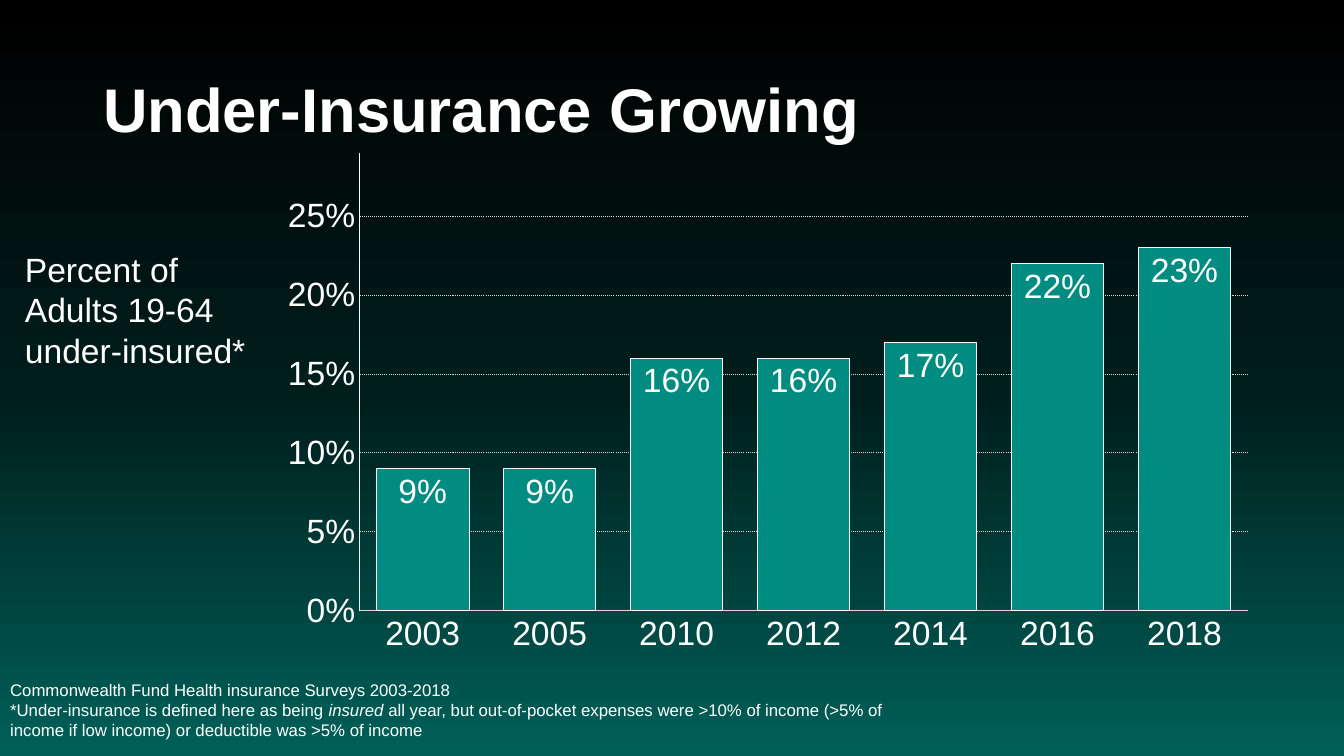
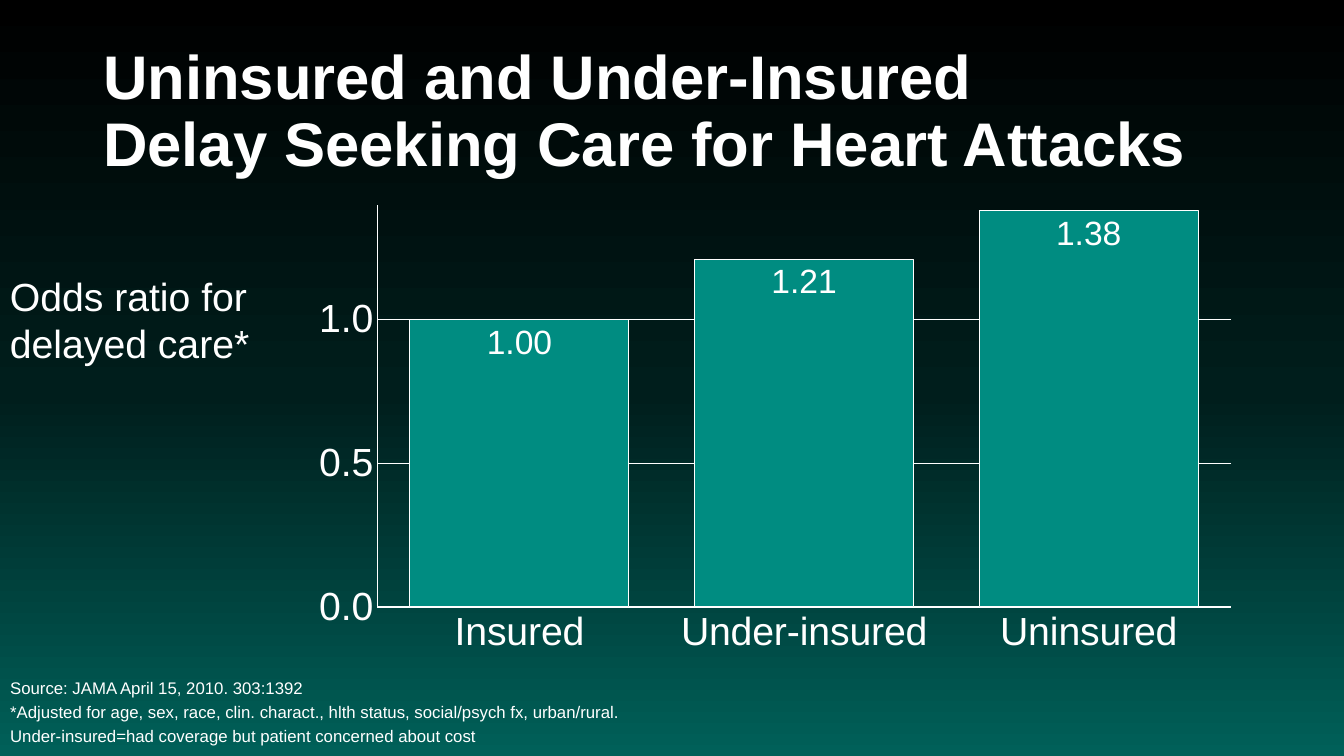
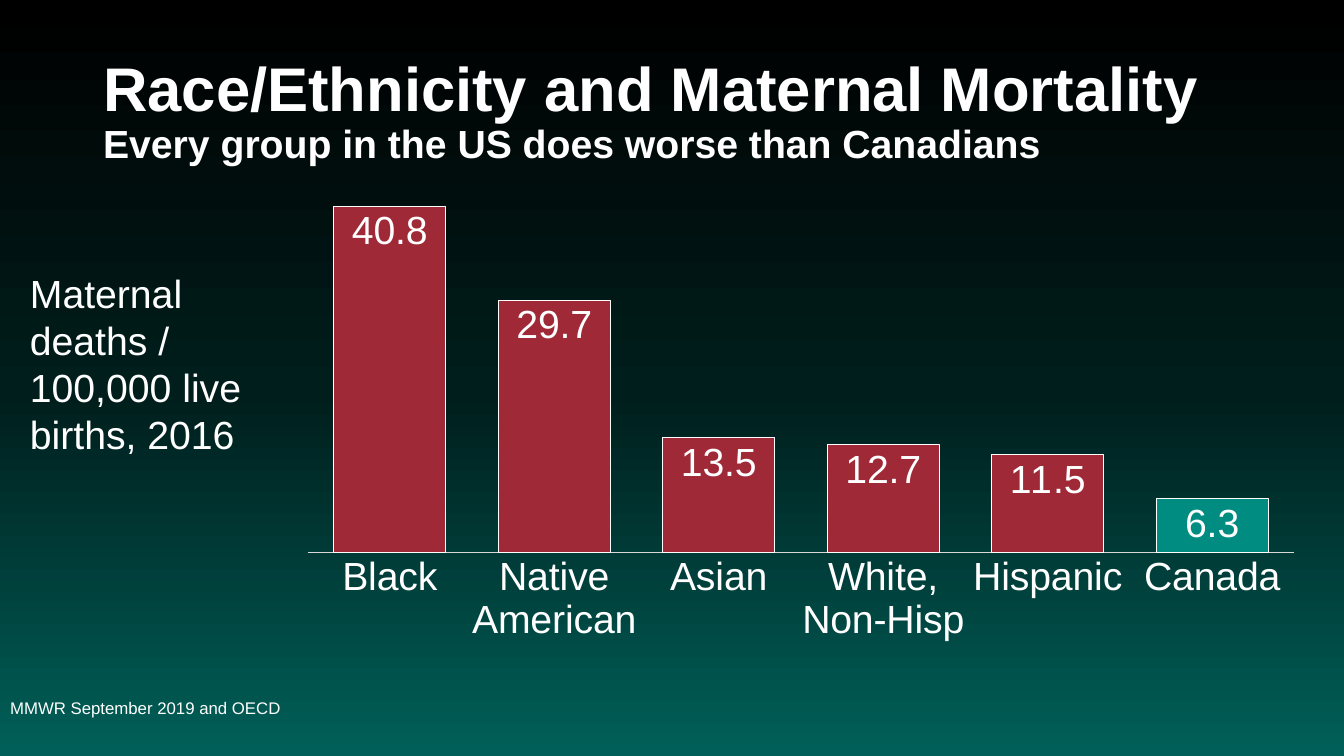
"""Build three slides on health insurance and mortality, each with one column chart."""
from copy import deepcopy

from lxml.etree import fromstring
from pptx import Presentation
from pptx.chart.data import CategoryChartData
from pptx.dml.color import RGBColor
from pptx.enum.chart import XL_CHART_TYPE as ChartType, XL_LABEL_POSITION as LabelPos, XL_TICK_MARK as Tick
from pptx.enum.dml import MSO_LINE as Dash
from pptx.enum.text import MSO_ANCHOR as Anchor, MSO_AUTO_SIZE as AutoSize, PP_ALIGN as Align
from pptx.oxml.ns import nsdecls, qn
from pptx.util import Pt

PX = 914400 / 100.8
FONT = "Arial"
BLACK = RGBColor(0x00, 0x00, 0x00)
DARK_TEAL = RGBColor(0x00, 0x1E, 0x1C)
DEEP_TEAL = RGBColor(0x00, 0x60, 0x59)
TEAL = RGBColor(0x00, 0x8C, 0x81)
RED = RGBColor(0x9F, 0x29, 0x36)
WHITE = RGBColor(0xFF, 0xFF, 0xFF)
GREY = RGBColor(0xD9, 0xD9, 0xD9)

TITLE_BOX = (93, 40, 1159, 146)
FOOTNOTE_BOX = (0, 663, 907, 93)

SLIDES = [
    dict(
        title="Under-Insurance Growing", subtitle=None,
        footnote=[
            ["Commonwealth Fund Health insurance Surveys 2003-2018"],
            ["*Under-insurance is defined here as being ", "insured",
             " all year, but out-of-pocket expenses were >10% of income "
             "(>5% of income if low income) or deductible was >5% of income"],
        ],
        footnote_spacing=1.0,
        measure=[["Percent of Adults 19-64 under-insured*"]],
        measure_box=(15, 244, 253, 132), measure_size=24,
        chart_box=(268, 143, 1000, 520),
        values={"2003": 0.09, "2005": 0.09, "2010": 0.16, "2012": 0.16,
                "2014": 0.17, "2016": 0.22, "2018": 0.23},
        color=TEAL, highlights={}, gap=37, overlap=-27,
        label_size=24, label_format="0%", axis_size=24, base_line=(GREY, 0.75),
        scale=dict(top=0.29, step=0.05, format="0%", grid=GREY, dash=Dash.ROUND_DOT),
        plot=None,
    ),
    dict(
        title="Uninsured and Under-Insured\vDelay Seeking Care for Heart Attacks", subtitle=None,
        footnote=[
            ["Source: JAMA April 15, 2010. 303:1392"],
            ["*Adjusted for age, sex, race, clin. charact., hlth status, social/psych fx, urban/rural."],
            ["Under-insured=had coverage but patient concerned about cost"],
        ],
        footnote_spacing=1.2,
        measure=[["Odds ratio for delayed care*"]],
        measure_box=(0, 267, 272, 105), measure_size=28,
        chart_box=(258, 186, 993, 473),
        values={"Insured": 1, "Under-insured": 1.21, "Uninsured": 1.38},
        color=TEAL, highlights={}, gap=30, overlap=0,
        label_size=24, label_format="#,##0.00", axis_size=28, base_line=(WHITE, 1),
        scale=dict(top=1.4, step=0.5, format="#,##0.0", grid=WHITE, dash=Dash.SOLID),
        plot=dict(x=0.12, y=0.04, w=0.86, h=0.85),
    ),
    dict(
        title="Race/Ethnicity and Maternal Mortality\v",
        subtitle="Every group in the US does worse than Canadians",
        footnote=[["MMWR September 2019 and OECD"]],
        footnote_spacing=0.9,
        measure=[["Maternal"], ["deaths / 100,000 live births, 2016"]],
        measure_box=(20, 264, 256, 201), measure_size=28,
        chart_box=(287, 161, 1028, 491),
        values={"Black": 40.8, "Native\nAmerican": 29.7, "Asian": 13.5,
                "White,\nNon-Hisp": 12.7, "Hispanic": 11.5, "Canada": 6.3},
        color=RED, highlights={5: TEAL}, gap=47, overlap=-27,
        label_size=28, label_format="0.0", axis_size=28, base_line=(GREY, 0.75),
        scale=None, plot=None,
    ),
]


def emu(box):
    return [round(length * PX) for length in box]


def write(frame, paragraphs, size, spacing=1.0, bold=False):
    """Fill a frame; every second run of a paragraph is italic."""
    frame.word_wrap = True
    for index, runs in enumerate(paragraphs):
        paragraph = frame.add_paragraph() if index else frame.paragraphs[0]
        paragraph.alignment = Align.LEFT
        paragraph.line_spacing = spacing
        paragraph.space_before = Pt(0)
        props = paragraph._p.get_or_add_pPr()
        props.set("marL", "0")
        props.set("indent", "0")
        props.append(fromstring(f"<a:buNone {nsdecls('a')}/>"))
        paragraph.font.name = FONT
        paragraph.font.size = Pt(size)
        paragraph.font.bold = bold
        paragraph.font.color.rgb = WHITE
        for order, text in enumerate(runs):
            if "\v" in text:
                paragraph.text = text
            else:
                run = paragraph.add_run()
                run.text = text
                if order % 2:
                    run.font.italic = True


prs = Presentation()
prs.slide_width, prs.slide_height = emu((1344, 756))
layout = prs.slide_layouts[1]

backdrop = prs.slide_master.background.fill
backdrop.gradient()
backdrop.gradient_angle = 270
first_stop = next(prs.slide_master._element.iter(qn("a:gs")))
first_stop.addnext(deepcopy(first_stop))
for stop, (position, color) in zip(backdrop.gradient_stops,
                                   [(0, BLACK), (0.52, DARK_TEAL), (1, DEEP_TEAL)]):
    stop.position = position
    stop.color.rgb = color

for content in SLIDES:
    slide = prs.slides.add_slide(layout)
    title, footnote = slide.shapes.title, slide.placeholders[1]
    for holder, box in ((title, TITLE_BOX), (footnote, FOOTNOTE_BOX)):
        holder.left, holder.top, holder.width, holder.height = emu(box)
        holder.text_frame.auto_size = AutoSize.NONE
        holder.text_frame.vertical_anchor = Anchor.MIDDLE
    write(title.text_frame, [[content["title"]]], 44, 0.9, bold=True)
    if content["subtitle"]:
        subtitle = title.text_frame.paragraphs[0].add_run()
        subtitle.text = content["subtitle"]
        subtitle.font.size = Pt(28)
    write(footnote.text_frame, content["footnote"], 12, content["footnote_spacing"])

    measure = slide.shapes.add_textbox(*emu(content["measure_box"])).text_frame
    write(measure, content["measure"], content["measure_size"])
    measure.auto_size = AutoSize.SHAPE_TO_FIT_TEXT

    data = CategoryChartData()
    data.categories = list(content["values"])
    data.add_series("Series 1", list(content["values"].values()))
    chart = slide.shapes.add_chart(
        ChartType.COLUMN_CLUSTERED, *emu(content["chart_box"]), data).chart
    chart.has_title = chart.has_legend = False
    chart.font.name = FONT
    chart.font.size = Pt(content["axis_size"])
    chart.font.color.rgb = WHITE

    columns = chart.plots[0]
    columns.vary_by_categories = False
    columns.gap_width = content["gap"]
    columns.overlap = content["overlap"]
    series = columns.series[0]
    colored = [(series, content["color"])]
    colored += [(series.points[i], color) for i, color in content["highlights"].items()]
    for part, color in colored:
        part.format.fill.solid()
        part.format.fill.fore_color.rgb = color
        part.format.line.color.rgb = WHITE
        part.format.line.width = Pt(0.75)

    labels = series.data_labels
    labels.show_value = True
    labels.position = LabelPos.INSIDE_END
    labels.number_format = content["label_format"]
    labels.number_format_is_linked = False
    labels.font.name = FONT
    labels.font.size = Pt(content["label_size"])
    labels.font.color.rgb = WHITE

    base, values = chart.category_axis, chart.value_axis
    base_color, base_width = content["base_line"]
    base.format.line.color.rgb = base_color
    base.format.line.width = Pt(base_width)
    base.major_tick_mark = values.major_tick_mark = Tick.NONE
    scale = content["scale"]
    values.visible = values.has_major_gridlines = bool(scale)
    values.minimum_scale = 0
    if scale:
        values.maximum_scale = scale["top"]
        values.major_unit = scale["step"]
        values.tick_labels.number_format = scale["format"]
        values.tick_labels.number_format_is_linked = False
        values.format.line.color.rgb = WHITE
        values.format.line.width = Pt(0.75)
        grid = values.major_gridlines.format.line
        grid.color.rgb = scale["grid"]
        grid.width = Pt(0.75)
        grid.dash_style = scale["dash"]

    if content["plot"]:
        area = chart._chartSpace.find(".//" + qn("c:plotArea"))
        for old in area.findall(qn("c:layout")):
            area.remove(old)
        sizes = "".join(f'<c:{side} val="{share}"/>' for side, share in content["plot"].items())
        area.insert(0, fromstring(
            f'<c:layout {nsdecls("c")}><c:manualLayout><c:layoutTarget val="inner"/>'
            f'<c:xMode val="edge"/><c:yMode val="edge"/>{sizes}</c:manualLayout></c:layout>'))

prs.save("out.pptx")
